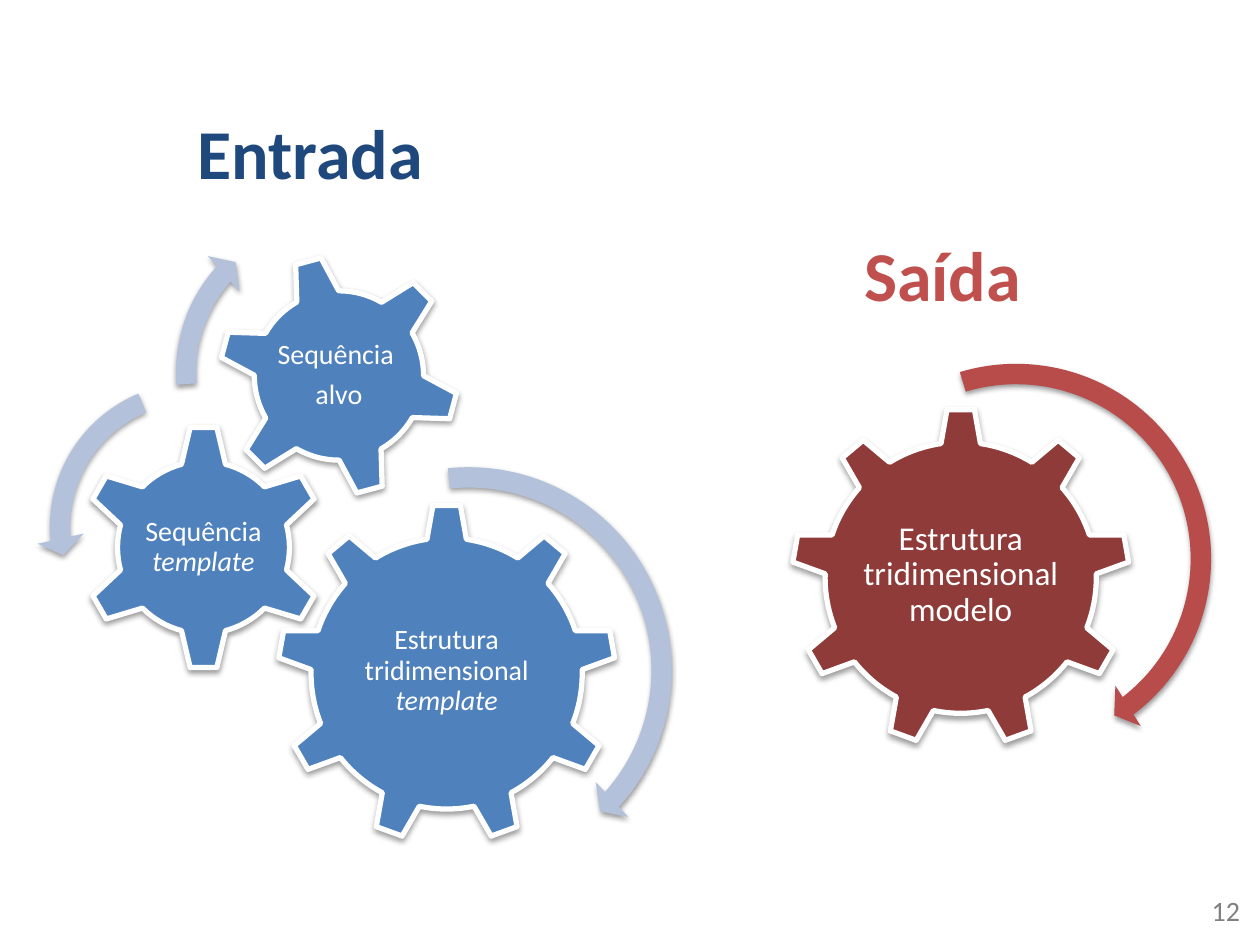
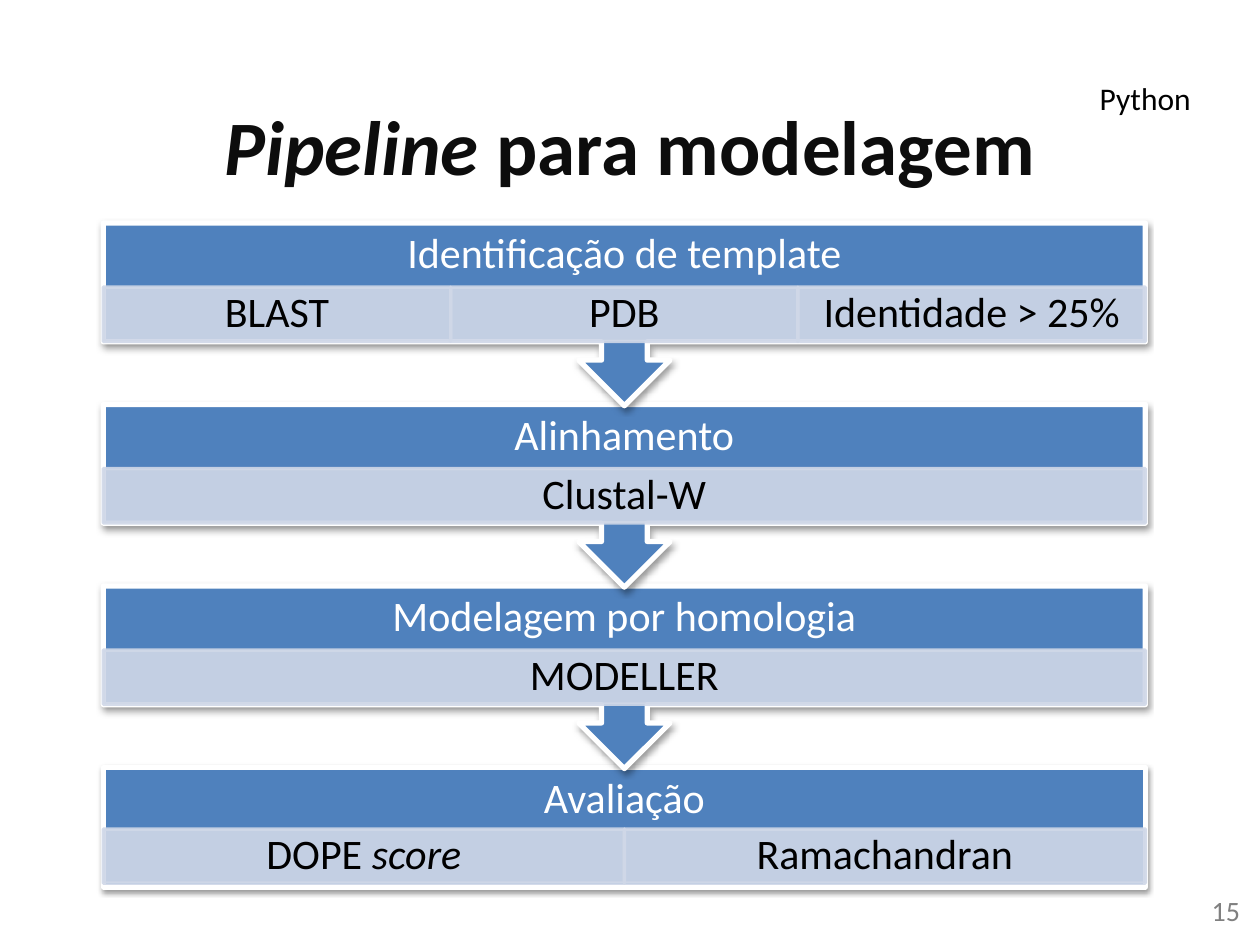
from dataclasses import dataclass

from lxml import etree
from pptx import Presentation
from pptx.dml.color import RGBColor
from pptx.enum.shapes import MSO_SHAPE
from pptx.enum.text import MSO_ANCHOR, MSO_AUTO_SIZE, PP_ALIGN
from pptx.oxml.ns import qn
from pptx.util import Emu, Pt

RECTANGLE = MSO_SHAPE.RECTANGLE
CALLOUT = MSO_SHAPE.UP_ARROW_CALLOUT
GEAR_6, GEAR_9 = MSO_SHAPE.GEAR_6, MSO_SHAPE.GEAR_9
ARC, LEFT_ARC = MSO_SHAPE.CIRCULAR_ARROW, MSO_SHAPE.LEFT_CIRCULAR_ARROW
LEFT, CENTER, RIGHT = PP_ALIGN.LEFT, PP_ALIGN.CENTER, PP_ALIGN.RIGHT
TOP, MIDDLE = MSO_ANCHOR.TOP, MSO_ANCHOR.MIDDLE
PX = 9144


@dataclass(frozen=True)
class Theme:
    """Colours, font and type sizes shared by the slides."""
    font: str = "Calibri"
    white: str = "FFFFFF"
    black: str = "000000"
    ink: str = "0D0D0D"
    gray: str = "808080"
    blue: str = "4F81BD"
    navy: str = "1F497D"
    arc_blue: str = "B3C1DB"
    cell: str = "D0D8E8"
    red: str = "C0504D"
    gear_red: str = "8E3B39"
    arc_red: str = "B74C4A"
    title: int = 44
    heading: int = 40
    step: int = 24
    output: int = 19
    note: int = 18
    small: int = 16


THEME = Theme()


def px(*lengths):
    """Turn whole px lengths into EMU."""
    return [Emu(round(length * PX)) for length in lengths]


def write(frame, paragraphs, size, color, align=LEFT, anchor=TOP, bold=False,
          insets=(10, 5, 10, 5), wrap=True, grow=False, spacing=None):
    """Fill a text frame; a paragraph is a string or a list of (text, italic)."""
    frame.word_wrap = wrap
    frame.auto_size = MSO_AUTO_SIZE.SHAPE_TO_FIT_TEXT if grow else MSO_AUTO_SIZE.NONE
    frame.vertical_anchor = anchor
    (frame.margin_left, frame.margin_top,
     frame.margin_right, frame.margin_bottom) = px(*insets)
    for index, spans in enumerate(paragraphs):
        para = frame.add_paragraph() if index else frame.paragraphs[0]
        para.alignment = align
        if spacing:
            para.line_spacing = spacing
            para.space_after = Pt(round(size * 0.35, 1))
        for text, italic in [(spans, False)] if isinstance(spans, str) else spans:
            span = para.add_run()
            span.text = text
            font = span.font
            font.name, font.size, font.bold, font.italic = THEME.font, Pt(size), bold, italic
            font.color.rgb = RGBColor.from_string(color)


def add_text(page, box, paragraphs, size, color, **options):
    """Add a text box with formatted text."""
    write(page.shapes.add_textbox(*px(*box)).text_frame, paragraphs, size, color, **options)


def add_shadow(shape):
    """Give a shape the soft shadow that falls straight down."""
    effects = shape.element.spPr.find(qn("a:effectLst"))
    shadow = etree.SubElement(effects, qn("a:outerShdw"), blurRad="40000",
                              dist="20000", dir="5400000", rotWithShape="0")
    tint = etree.SubElement(shadow, qn("a:srgbClr"), val=THEME.black)
    etree.SubElement(tint, qn("a:alpha"), val="38000")


def add_figure(page, kind, box, fill, line=None, width=3, shadow=True,
               rotation=0, adjustments=(), opacity=None):
    """Add a filled preset shape, with its outline and shadow."""
    shape = page.shapes.add_shape(kind, *px(*box))
    shape.rotation = rotation
    for index, value in enumerate(adjustments):
        shape.adjustments[index] = value
    shape.fill.solid()
    shape.fill.fore_color.rgb = RGBColor.from_string(fill)
    if line:
        shape.line.color.rgb = RGBColor.from_string(line)
        shape.line.width = Pt(width)
    else:
        shape.line.fill.background()
    shape.shadow.inherit = False
    if shadow:
        add_shadow(shape)
    if opacity:
        for tint in shape.element.spPr.iter(qn("a:srgbClr")):
            etree.SubElement(tint, qn("a:alpha"), val=str(opacity * 1000))
    return shape


def add_gear(page, box, kind, label_size, paragraphs, fill, size, inset=2, rotation=0, lift=0):
    """Draw a gear with a level label centred on it."""
    left, top, width, height = box
    add_figure(page, kind, box, fill, THEME.white, rotation=rotation)
    label_width, label_height = label_size
    label = (left + (width - label_width) / 2,
             top + (height - label_height) / 2 - lift, label_width, label_height)
    add_text(page, label, paragraphs, size, THEME.white, align=CENTER,
             anchor=MIDDLE, insets=(inset,) * 4, spacing=0.9)


def add_heading(page, box, text, color):
    """Add the bold heading of a group of gears."""
    add_text(page, box, [text], THEME.heading, color, bold=True, wrap=False, grow=True)


def add_page_number(page, number):
    """Add the page number at the lower right."""
    add_text(page, (761, 704, 233, 40), [number], THEME.small, THEME.gray, align=RIGHT)


def add_inputs(page, box):
    """Draw the three input gears, their turning arrows and the heading."""
    left, top = box
    gears = [
        ((191, 240, 269, 269), GEAR_9, (161, 138),
         [[("Estrutura tridimensional ", False), ("template", True)]], 0, 2),
        ((35, 177, 195, 195), GEAR_6, (97, 96),
         [[("Sequência ", False), ("template", True)]], 0, 0),
        ((144, 42, 192, 192), GEAR_6, (108, 108), ["Sequência ", "alvo"], 345, 0),
    ]
    for (x, y, width, height), kind, label_size, paragraphs, rotation, lift in gears:
        add_gear(page, (left + x, top + y, width, height), kind, label_size, paragraphs,
                 THEME.blue, THEME.small, rotation=rotation, lift=lift)
    arcs = [
        (ARC, (171, 200, 344), (0.047, 2.99, 25.224, 158.48, 0.055)),
        (LEFT_ARC, (0, 133, 250), (0.065, 4.3, 104.891, 148.378, 0.075)),
        (ARC, (100, 0, 270), (0.06, 3.941, 133.138, 105.082, 0.07)),
    ]
    for kind, (x, y, side), adjustments in arcs:
        add_figure(page, kind, (left + x, top + y, side, side), THEME.arc_blue,
                   adjustments=adjustments)
    add_heading(page, (left + 118, top - 78, 203, 77), "Entrada", THEME.navy)


def add_output(page, box):
    """Draw the output gear, its turning arrow and the heading."""
    left, top = box
    add_gear(page, (left, top + 46, 269, 269), GEAR_9, (161, 138),
             ["Estrutura tridimensional modelo"], THEME.gear_red, THEME.output,
             inset=3, lift=2)
    add_figure(page, ARC, (left + 13, top, 331, 331), THEME.arc_red,
               adjustments=(0.049, 3.126, 31.634, 151.933, 0.057))
    add_heading(page, (left + 48, top - 99, 146, 77), "Saída", THEME.red)


def add_step(page, box, name, tools, last=False):
    """Draw one pipeline step: a header, its row of tools and an arrow onward."""
    left, top, width, height = box
    add_figure(page, RECTANGLE if last else CALLOUT, box, THEME.blue, THEME.white,
               rotation=0 if last else 180)
    add_text(page, (left, top, width, 51), [name], THEME.step, THEME.white,
             align=CENTER, anchor=MIDDLE, insets=(19,) * 4, spacing=0.9)
    cell_width = width / len(tools)
    cell_top = top + (49 if last else 51)
    for column, tool in enumerate(tools):
        cell = add_figure(page, RECTANGLE,
                          (left + column * cell_width, cell_top, cell_width, 43),
                          THEME.cell, THEME.cell, width=2, shadow=False, opacity=90)
        write(cell.text_frame, [tool], THEME.step, THEME.black, align=CENTER,
              anchor=MIDDLE, insets=(19, 3, 19, 3), spacing=0.9)


def add_pipeline(page, box):
    """Stack the pipeline steps, so that each arrow covers the step below."""
    left, top, width = box
    steps = [
        ("Identificação de template", ["BLAST", "PDB", "Identidade > 25%"]),
        ("Alinhamento", ["Clustal-W"]),
        ("Modelagem por homologia", ["MODELLER"]),
        ("Avaliação", [[("DOPE ", False), ("score", True)], "Ramachandran"]),
    ]
    for row, (name, tools) in reversed(list(enumerate(steps))):
        last = row == len(steps) - 1
        add_step(page, (left, top + row * 144, width, 95 if last else 145), name, tools, last)


def build_gears_slide(deck):
    """Build the slide of inputs and output."""
    page = deck.slides.add_slide(deck.slide_layouts[6])
    add_inputs(page, (29, 160))
    add_page_number(page, "12")
    add_output(page, (628, 278))


def build_pipeline_slide(deck):
    """Build the slide of the modelling pipeline."""
    page = deck.slides.add_slide(deck.slide_layouts[5])
    title = page.shapes.title
    title.left, title.top, title.width, title.height = px(50, 52, 900, 125)
    write(title.text_frame, [[("Pipeline ", True), ("para modelagem", False)]],
          THEME.title, THEME.ink, align=CENTER, anchor=MIDDLE, bold=True)
    add_page_number(page, "15")
    add_pipeline(page, (82, 177, 827))
    add_text(page, (863, 58, 93, 40), ["Python"], THEME.note, THEME.black,
             wrap=False, grow=True)


def main():
    """Build and save the deck."""
    deck = Presentation()
    deck.slide_width, deck.slide_height = px(1000, 750)
    build_gears_slide(deck)
    build_pipeline_slide(deck)
    deck.save("out.pptx")


if __name__ == "__main__":
    main()
